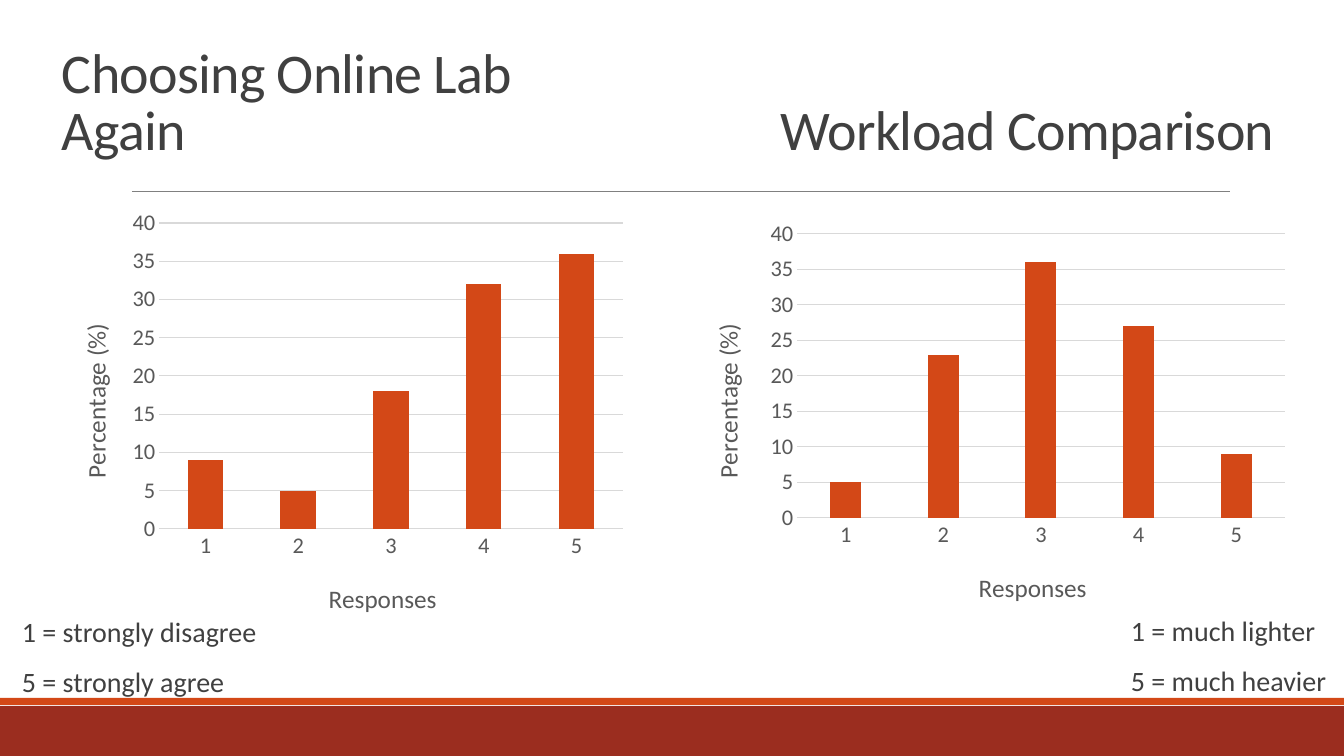
from lxml import etree
from pptx import Presentation
from pptx.chart.data import CategoryChartData
from pptx.dml.color import RGBColor
from pptx.enum.chart import XL_CHART_TYPE, XL_TICK_MARK
from pptx.enum.shapes import MSO_CONNECTOR, MSO_SHAPE
from pptx.enum.text import MSO_ANCHOR
from pptx.oxml import parse_xml
from pptx.oxml.ns import nsdecls, qn
from pptx.util import Emu, Pt

COLUMN = XL_CHART_TYPE.COLUMN_CLUSTERED
NO_TICK = XL_TICK_MARK.NONE
RECT = MSO_SHAPE.RECTANGLE
STRAIGHT = MSO_CONNECTOR.STRAIGHT
TOP, BOTTOM = MSO_ANCHOR.TOP, MSO_ANCHOR.BOTTOM

FONT = "Calibri"
COLORS = {
    "band": "9B2D1F",
    "accent": "D34817",
    "rule": "808080",
    "text": "404040",
    "axis": "595959",
    "grid": "D9D9D9",
}
SLIDE_W, SLIDE_H = 1344, 756
EMU_PER_PX = 914400 / 100.8


def px(length):
    return Emu(round(length * EMU_PER_PX))


def rgb(name):
    return RGBColor.from_string(COLORS[name])


def style_font(font, size, color):
    font.name = FONT
    font.size = Pt(size)
    font.bold = False
    font.color.rgb = rgb(color)


def add_text_frame(slide, box, anchor, insets):
    frame = slide.shapes.add_textbox(*map(px, box)).text_frame
    frame.word_wrap = True
    frame.vertical_anchor = anchor
    frame.margin_left, frame.margin_right = map(px, insets)
    frame.margin_top = frame.margin_bottom = px(5)
    return frame


def add_backdrop(slide):
    # Footer bands
    for color, top, height in (("band", 706, 50), ("accent", 698, 7)):
        band = slide.shapes.add_shape(RECT, 0, px(top), px(SLIDE_W), px(height))
        band.shadow.inherit = False
        band.fill.solid()
        band.fill.fore_color.rgb = rgb(color)
        band.line.fill.background()
    # Rule under the headings
    rule = slide.shapes.add_connector(STRAIGHT, px(132), px(191), px(1230), px(191))
    rule.line.color.rgb = rgb("rule")
    rule.line.width = Pt(0.5)
    etree.SubElement(rule._element.spPr, qn("a:effectLst"))


def add_heading(slide, box, heading):
    frame = add_text_frame(slide, box, BOTTOM, (10, 20))
    paragraph = frame.paragraphs[0]
    paragraph.line_spacing = 0.85
    run = paragraph.add_run()
    run.text = heading
    style_font(run.font, 40, "text")
    run._r.get_or_add_rPr().set("spc", "-50")


def add_scale_key(slide, box, meanings):
    frame = add_text_frame(slide, box, TOP, (0, 0))
    for index, meaning in enumerate(meanings):
        paragraph = frame.add_paragraph() if index else frame.paragraphs[0]
        paragraph.line_spacing = 0.9
        paragraph.space_before, paragraph.space_after = Pt(12), Pt(2)
        paragraph._p.get_or_add_pPr().set("marL", str(px(10)))
        run = paragraph.add_run()
        run.text = meaning
        style_font(run.font, 20, "text")


def manual_layout(target, **fractions):
    inner = '<c:layoutTarget val="inner"/>' if target == "plot" else ""
    modes = '<c:xMode val="edge"/><c:yMode val="edge"/>'
    sizes = "".join(f'<c:{k} val="{v:.4f}"/>' for k, v in fractions.items())
    return parse_xml(
        f'<c:layout {nsdecls("c")}><c:manualLayout>{inner}{modes}{sizes}'
        "</c:manualLayout></c:layout>"
    )


def place_plot(chart, box, plot_box):
    left, top, width, height = box
    x, y, w, h = plot_box
    plot_area = chart._chartSpace.chart.plotArea
    for layout in plot_area.findall(qn("c:layout")):
        plot_area.remove(layout)
    plot_area.insert(0, manual_layout(
        "plot", x=(x - left) / width, y=(y - top) / height, w=w / width, h=h / height))


def title_axis(axis, title, box, corner):
    frame = axis.axis_title.text_frame
    run = frame.paragraphs[0].add_run()
    run.text = title
    style_font(run.font, 18, "axis")
    element = axis.axis_title._element
    for layout in element.findall(qn("c:layout")):
        element.remove(layout)
    left, top, width, height = box
    element.find(qn("c:tx")).addnext(manual_layout(
        "title", x=(corner[0] - left) / width, y=(corner[1] - top) / height))


def add_response_chart(slide, box, plot_box, percentages, gap, overlap, title_corners):
    data = CategoryChartData()
    data.categories = ["1", "2", "3", "4", "5"]
    data.add_series("Series 1", percentages)
    chart = slide.shapes.add_chart(COLUMN, *map(px, box), data).chart
    chart.has_legend = False
    chart.has_title = False
    chart.font.name = FONT
    chart.font.size = Pt(10)

    # Columns
    columns = chart.plots[0]
    columns.vary_by_categories = False
    columns.gap_width, columns.overlap = gap, overlap
    fill = columns.series[0].format.fill
    fill.solid()
    fill.fore_color.rgb = rgb("accent")

    # Axes
    responses, percentage = chart.category_axis, chart.value_axis
    for axis in (responses, percentage):
        axis.major_tick_mark = axis.minor_tick_mark = NO_TICK
        style_font(axis.tick_labels.font, 16, "axis")
    percentage.minimum_scale, percentage.maximum_scale = 0, 40
    percentage.major_unit = 5
    percentage.format.line.fill.background()
    percentage.has_major_gridlines = True
    for line in (responses.format.line, percentage.major_gridlines.format.line):
        line.color.rgb = rgb("grid")
        line.width = Pt(0.75)

    title_axis(responses, "Responses", box, title_corners[0])
    title_axis(percentage, "Percentage (%)", box, title_corners[1])
    place_plot(chart, box, plot_box)


def main():
    prs = Presentation()
    prs.slide_width, prs.slide_height = px(SLIDE_W), px(SLIDE_H)
    slide = prs.slides.add_slide(prs.slide_layouts[6])
    add_backdrop(slide)

    # Left half: choosing the online lab again
    add_heading(slide, (52, 75, 599, 92), "Choosing Online Lab Again")
    add_scale_key(slide, (12, 613, 272, 109),
                  ("1 = strongly disagree", "5 = strongly agree"))
    add_response_chart(slide, (57, 201, 577, 430), (159, 223, 464, 306),
                       (9, 5, 18, 32, 36), 161, -24, ((324, 577), (74, 319)))

    # Right half: workload comparison
    add_heading(slide, (771, 64, 538, 103), "Workload Comparison")
    add_scale_key(slide, (1121, 612, 272, 109),
                  ("1 = much lighter", "5 = much heavier"))
    add_response_chart(slide, (696, 212, 602, 408), (797, 234, 488, 284),
                       (5, 23, 36, 27, 9), 214, -27, ((974, 566), (706, 319)))

    prs.save("out.pptx")


if __name__ == "__main__":
    main()
